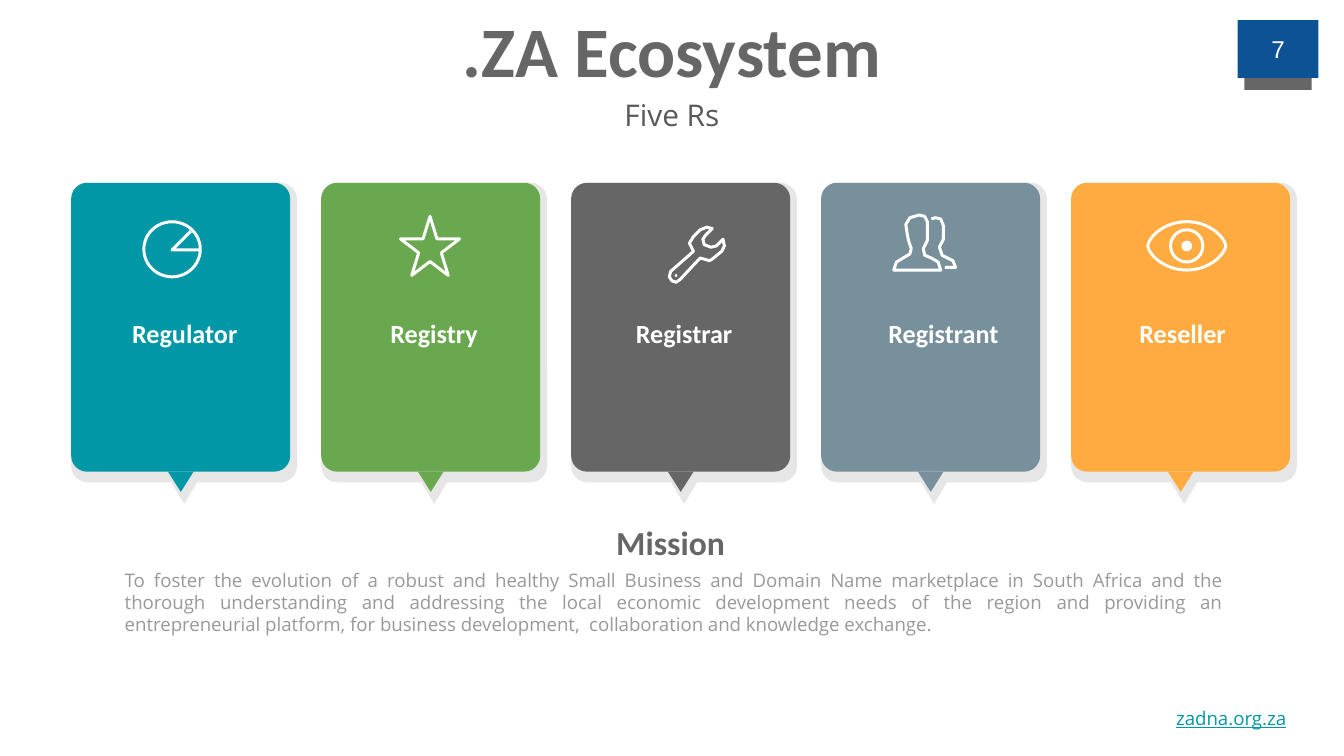
import math

import pptx
import pptx.dml.color
import pptx.enum.shapes
import pptx.enum.text
import pptx.util
from lxml import etree
from pptx.oxml.ns import qn
from pptx.util import Inches

SHAPE = pptx.enum.shapes.MSO_SHAPE
ALIGN = pptx.enum.text.PP_ALIGN
ANCHOR = pptx.enum.text.MSO_ANCHOR

# name, colour, centre of the label
CARDS = [
    ("Regulator", "0097A7", 1.375),
    ("Registry", "6AA84F", 3.23),
    ("Registrar", "666666", 5.09),
    ("Registrant", "78909C", 7.02),
    ("Reseller", "FFAB40", 8.80),
]
MISSION = (
    "To foster the evolution of a robust and healthy Small Business and Domain Name "
    "marketplace in South Africa and the thorough understanding and addressing the local "
    "economic development needs of the region and providing an entrepreneurial platform, "
    "for business development,  collaboration and knowledge exchange."
)
CARD_LEFT, CARD_TOP, CARD_STEP = 0.53, 1.36, 1.86

# Icon outlines as points along the middle of the stroke
PIE_WEDGE = [(1.42, 1.72), (1.28, 1.86), (1.49, 1.86)]
WRENCH = [
    (5.30, 1.70), (5.26, 1.69), (5.21, 1.71), (5.16, 1.76), (5.13, 1.81), (5.16, 1.87),
    (4.99, 2.02), (4.98, 2.06), (5.00, 2.09), (5.03, 2.10), (5.06, 2.08), (5.21, 1.92),
    (5.28, 1.94), (5.31, 1.92), (5.37, 1.87), (5.39, 1.83), (5.38, 1.78), (5.33, 1.83),
    (5.29, 1.84), (5.24, 1.82), (5.23, 1.78), (5.25, 1.75),
]
FRONT_PERSON = [
    (6.65, 2.01), (6.67, 1.95), (6.72, 1.92), (6.77, 1.89), (6.78, 1.85), (6.76, 1.79),
    (6.75, 1.74), (6.74, 1.67), (6.77, 1.62), (6.84, 1.60), (6.88, 1.61), (6.90, 1.65),
    (6.90, 1.79), (6.87, 1.85), (6.88, 1.90), (6.93, 1.92), (6.98, 1.95), (7.00, 2.01),
]
REAR_PERSON = [
    (6.93, 1.63), (6.96, 1.62), (7.00, 1.63), (7.02, 1.68), (7.02, 1.78), (6.99, 1.84),
    (7.01, 1.90), (7.05, 1.92), (7.09, 1.94), (7.11, 1.99), (7.03, 1.99),
]
EYE_ANGLES = [math.radians(a) for a in range(0, 360, 6)]
EYE = [
    (8.83 + 0.29 * math.cos(a), 1.83 + math.copysign(0.18 * abs(math.sin(a)) ** 1.3, math.sin(a)))
    for a in EYE_ANGLES
]
# points, closed
OUTLINES = [
    (PIE_WEDGE, False), (WRENCH, True), (REAR_PERSON, False), (FRONT_PERSON, True), (EYE, True),
]
# shape, box, filled
ICON_SHAPES = [
    (SHAPE.OVAL, (1.07, 1.65, 0.42, 0.41), False),
    (SHAPE.STAR_5_POINT, (2.98, 1.61, 0.44, 0.44), False),
    (SHAPE.OVAL, (5.02, 2.04, 0.02, 0.02), True),
    (SHAPE.OVAL, (8.71, 1.71, 0.24, 0.24), False),
    (SHAPE.OVAL, (8.79, 1.79, 0.08, 0.08), True),
]


def rgb(color):
    return pptx.dml.color.RGBColor.from_string(color)


def box(left, top, width, height):
    return [Inches(v) for v in (left, top, width, height)]


def add_shape(kind, place, color, alpha=None):
    sp = s.shapes.add_shape(kind, *box(*place))
    sp.shadow.inherit = False
    sp.line.fill.background()
    sp.fill.solid()
    sp.fill.fore_color.rgb = rgb(color)
    if alpha:
        clr = sp.fill._xPr.find(qn("a:solidFill"))[0]
        etree.SubElement(clr, qn("a:alpha")).set("val", str(alpha * 1000))
    return sp


def outline(sp):
    """Leave a shape hollow with a white edge."""
    sp.shadow.inherit = False
    sp.fill.background()
    sp.line.color.rgb = rgb("FFFFFF")
    sp.line.width = pptx.util.Pt(1.6)


def set_text(sp, text, size, color, font="Open Sans", bold=False, underline=False,
             align=ALIGN.CENTER, anchor=ANCHOR.TOP, spacing=1.0):
    tf = sp.text_frame
    tf.word_wrap = True
    tf.auto_size = pptx.enum.text.MSO_AUTO_SIZE.NONE
    tf.vertical_anchor = anchor
    tf.margin_left = tf.margin_right = tf.margin_top = tf.margin_bottom = Inches(0.1)
    p = tf.paragraphs[0]
    p.alignment = align
    p.line_spacing = spacing
    p.space_before = pptx.util.Pt(0)
    r = p.add_run()
    r.text = text
    r.font.name = font
    r.font.size = pptx.util.Pt(size)
    r.font.bold = bold
    r.font.underline = underline
    r.font.color.rgb = rgb(color)


def add_text(place, text, size, color, **fmt):
    set_text(s.shapes.add_textbox(*box(*place)), text, size, color, **fmt)


def fill_placeholder(sp, place, text, size, color, **fmt):
    sp.left, sp.top, sp.width, sp.height = box(*place)
    set_text(sp, text, size, color, **fmt)


def add_card(left, width, height, pointer, color, alpha=None):
    """Draw a rounded card with a pointer under its middle."""
    card = add_shape(SHAPE.ROUNDED_RECTANGLE, (left, CARD_TOP, width, height), color, alpha)
    card.adjustments[0] = 0.073
    tip = (left + (width - 0.19) / 2, CARD_TOP + height, 0.19, pointer)
    add_shape(SHAPE.ISOSCELES_TRIANGLE, tip, color, alpha).rotation = 180


prs = pptx.Presentation()
prs.slide_width = Inches(10)
prs.slide_height = prs.slide_width * 9 // 16
s = prs.slides.add_slide(prs.slide_layouts[0])

fill_placeholder(s.shapes.title, (0.34, -0.05, 9.32, 0.63), ".ZA Ecosystem", 38, "666666",
                 font="Calibri", bold=True)
fill_placeholder(s.placeholders[1], (2.46, 0.58, 5.08, 0.27), "Five Rs", 16, "595959",
                 spacing=1.15)

add_shape(SHAPE.RECTANGLE, (9.26, 0.57, 0.5, 0.1), "666666")
badge = add_shape(SHAPE.RECTANGLE, (9.21, 0.15, 0.6, 0.43), "0B5394")
set_text(badge, "7", 13, "FFFFFF", font="Arial", anchor=ANCHOR.MIDDLE)

for i, (name, color, center) in enumerate(CARDS):
    left = CARD_LEFT + i * CARD_STEP
    add_card(left, 1.68, 2.23, 0.16, "595959", alpha=15)
    add_card(left, 1.63, 2.15, 0.15, color)
    add_text((center - 0.67, 2.29, 1.34, 0.37), name, 14, "FFFFFF", font="Calibri",
             bold=True, anchor=ANCHOR.MIDDLE)

for points, closed in OUTLINES:
    first, *rest = [(Inches(x), Inches(y)) for x, y in points]
    fb = s.shapes.build_freeform(*first)
    fb.add_line_segments(rest, close=closed)
    outline(fb.convert_to_shape())
for kind, place, filled in ICON_SHAPES:
    sp = add_shape(kind, place, "FFFFFF")
    if not filled:
        outline(sp)

add_text((3.87, 3.85, 2.24, 0.37), "Mission", 18, "666666", font="Calibri", bold=True,
         anchor=ANCHOR.MIDDLE)
add_text((0.83, 4.13, 8.36, 0.6), MISSION, 10, "999999", align=ALIGN.JUSTIFY)
add_text((8.42, 5.16, 1.48, 0.33), "zadna.org.za", 10, "0097A7", underline=True)

prs.save("out.pptx")
